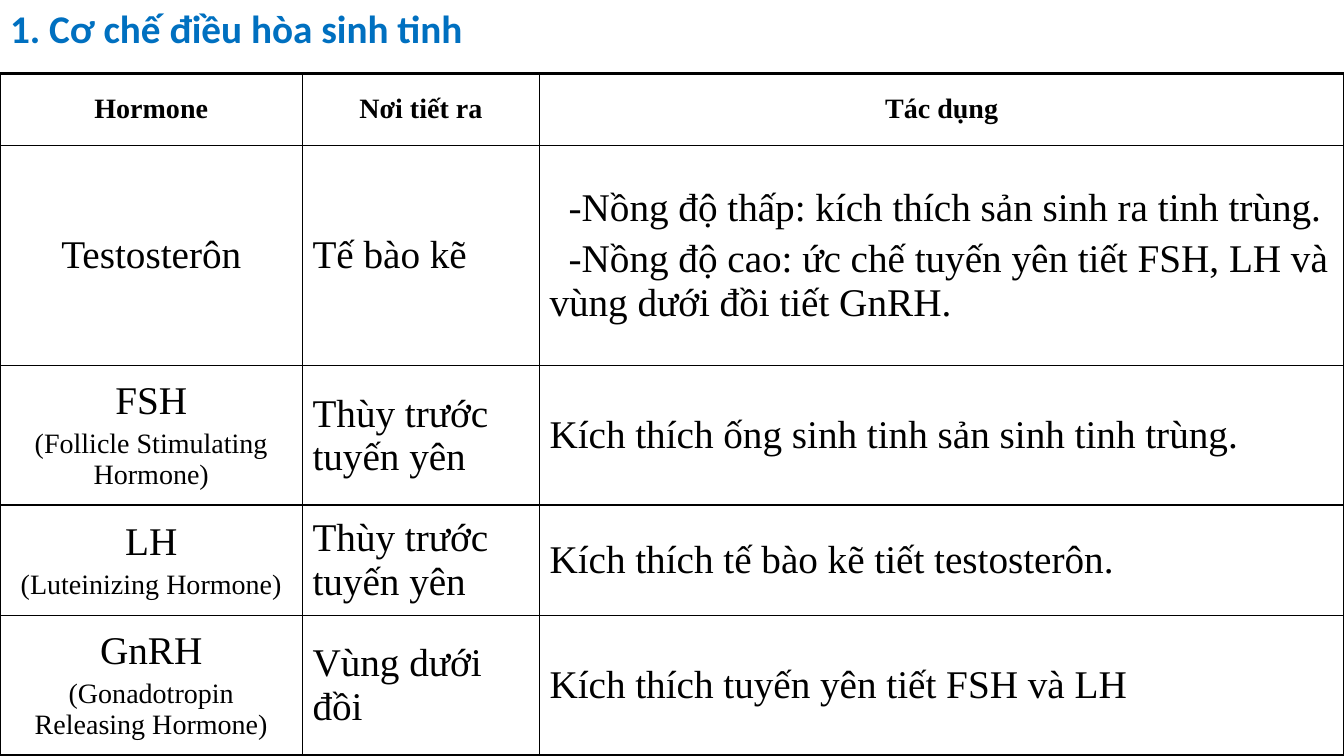
"""Builds a slide with a table of the hormones that regulate sperm production."""
import dataclasses

import lxml.etree
import pptx
import pptx.dml.color
import pptx.enum.text
import pptx.oxml.ns
import pptx.util

Inches, Pt = pptx.util.Inches, pptx.util.Pt
ALIGN = pptx.enum.text.PP_ALIGN
ANCHOR = pptx.enum.text.MSO_ANCHOR


@dataclasses.dataclass(frozen=True)
class Theme:
    title_font: str = "Calibri"
    table_font: str = "Times New Roman"
    title_color: str = "0070C0"
    ink: str = "000000"
    large: int = 28
    small: int = 20
    outer_line: float = 2.25
    inner_line: float = 1
    space_ratio: float = 0.2


COLUMNS = [3, 2.35, 7.98]
ROWS = [0.71, 2.19, 1.38, 1.1, 1.38]
HORMONES = [
    ["Hormone", "Nơi tiết ra", "Tác dụng"],
    ["Testosterôn", "Tế bào kẽ",
     "Nồng độ thấp: kích thích sản sinh ra tinh trùng.\n"
     "Nồng độ cao: ức chế tuyến yên tiết FSH, LH và vùng dưới đồi tiết GnRH."],
    ["FSH\n(Follicle Stimulating Hormone)", "Thùy trước tuyến yên",
     "Kích thích ống sinh tinh sản sinh tinh trùng."],
    ["LH\n(Luteinizing Hormone)", "Thùy trước tuyến yên",
     "Kích thích tế bào kẽ tiết testosterôn."],
    ["GnRH\n(Gonadotropin Releasing Hormone)", "Vùng dưới đồi",
     "Kích thích tuyến yên tiết FSH và LH"],
]


class SlideBuilder:
    def __init__(self, prs, theme):
        self.theme = theme
        self.slide = prs.slides.add_slide(prs.slide_layouts[5])

    def style(self, p, font, size, color, bold):
        for r in p.runs:
            r.font.name = font
            r.font.size = Pt(size)
            r.font.bold = bold
            r.font.color.rgb = pptx.dml.color.RGBColor.from_string(color)

    def title(self, text, left, top, width, height):
        sp = self.slide.shapes.title
        sp.left, sp.top, sp.width, sp.height = map(Inches, (left, top, width, height))
        tf = sp.text_frame
        tf.text = text
        tf.word_wrap = True
        tf.auto_size = pptx.enum.text.MSO_AUTO_SIZE.NONE
        tf.vertical_anchor = ANCHOR.TOP
        p = tf.paragraphs[0]
        p.alignment = ALIGN.LEFT
        self.style(p, self.theme.title_font, self.theme.large, self.theme.title_color, True)

    def add_xml(self, parent, tag, **attributes):
        return lxml.etree.SubElement(parent, pptx.oxml.ns.qn(tag), attributes)

    def border(self, cell, side, width):
        ln = self.add_xml(cell._tc.get_or_add_tcPr(), f"a:ln{side}", w=str(Pt(width)))
        fill = self.add_xml(ln, "a:solidFill")
        self.add_xml(fill, "a:srgbClr", val=self.theme.ink)

    def dash(self, p):
        pPr = p._p.get_or_add_pPr()
        pPr.set("marL", "0")
        pPr.set("indent", str(Inches(0.19)))
        self.add_xml(pPr, "a:buFont", typeface=self.theme.table_font)
        self.add_xml(pPr, "a:buChar", char="-")

    def fill_cell(self, cell, text, header, centered, dashed):
        cell.text_frame.text = text
        cell.vertical_anchor = ANCHOR.MIDDLE
        for p in cell.text_frame.paragraphs:
            small = header or p.text.startswith("(")
            size = self.theme.small if small else self.theme.large
            p.alignment = ALIGN.CENTER if centered else ALIGN.LEFT
            p.space_before = Pt(size * self.theme.space_ratio)
            self.style(p, self.theme.table_font, size, self.theme.ink, header)
            if dashed:
                self.dash(p)

    def table(self, values, left, top, columns, rows):
        size = map(Inches, (left, top, sum(columns), sum(rows)))
        table = self.slide.shapes.add_table(len(rows), len(columns), *size).table
        table.first_row = table.horz_banding = False
        for column, width in zip(table.columns, columns):
            column.width = Inches(width)
        for row, height in zip(table.rows, rows):
            row.height = Inches(height)
        for i, texts in enumerate(values):
            for j, text in enumerate(texts):
                cell = table.cell(i, j)
                self.fill_cell(cell, text, i == 0, i == 0 or j == 0, j == 2 and "\n" in text)
                edges = {"L": j == 0, "R": j == len(columns) - 1,
                         "T": i == 0, "B": i == len(rows) - 1}
                for side, outer in edges.items():
                    self.border(cell, side,
                                self.theme.outer_line if outer else self.theme.inner_line)
                cell.fill.background()


def main():
    prs = pptx.Presentation()
    prs.slide_width, prs.slide_height = Inches(13.33), Inches(7.5)
    s = SlideBuilder(prs, Theme())
    s.table(HORMONES, 0, 0.73, COLUMNS, ROWS)
    s.title("1. Cơ chế điều hòa sinh tinh", 0, -0.01, 4.77, 0.57)
    prs.save("out.pptx")


if __name__ == "__main__":
    main()
